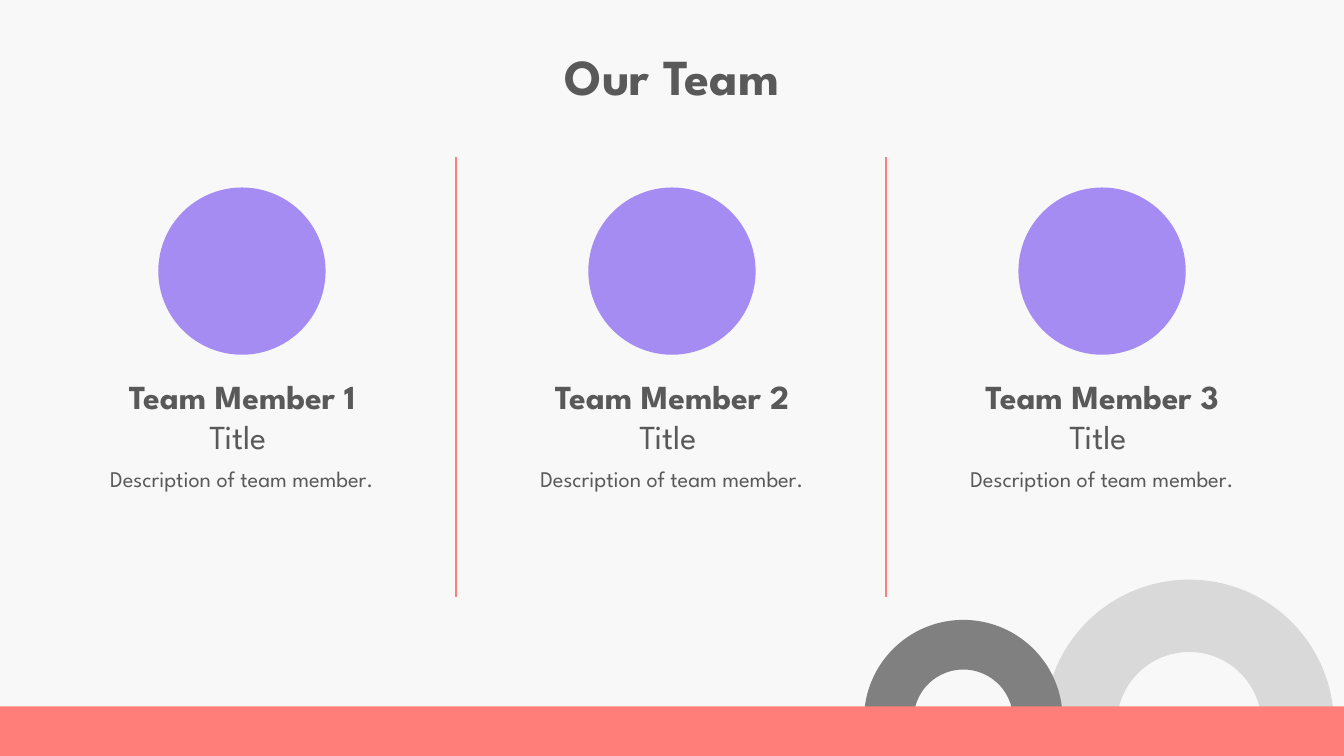
from pptx import Presentation
from pptx.dml.color import RGBColor
from pptx.enum.shapes import MSO_CONNECTOR, MSO_SHAPE
from pptx.enum.text import MSO_AUTO_SIZE, PP_ALIGN
from pptx.oxml.ns import qn
from pptx.util import Inches, Pt
from lxml.etree import SubElement

WIDE, HIGH = Inches(13.33), Inches(7.5)
HUES = {"page": "F8F8F8", "coral": "FF7E79", "violet": "A48CF2",
        "text": "595959", "dark": "808080", "light": "D9D9D9"}
FACE = "League Spartan"
HEAD = {"size": Pt(36), "bold": True}
NAME = {"size": Pt(24), "bold": True}
ROLE = {"size": Pt(24), "bold": False}
BODY = {"size": Pt(16), "bold": False}


def hue(key):
    return RGBColor.from_string(HUES[key])


# Grid: 100 columns across and 100 rows down
def col(n):
    return round(WIDE * n / 100)


def row(n):
    return round(HIGH * n / 100)


def add_form(slide, kind, x, y, w, h, key):
    form = slide.shapes.add_shape(kind, x, y, w, h)
    form.shadow.inherit = False
    form.fill.solid()
    form.fill.fore_color.rgb = hue(key)
    form.line.fill.background()


def add_text(slide, x, y, w, h, lines):
    """Each line is its text, its font values and the space before it."""
    frame = slide.shapes.add_textbox(x, y, w, h).text_frame
    frame.word_wrap = True
    frame.auto_size = MSO_AUTO_SIZE.SHAPE_TO_FIT_TEXT
    for i, (text, style, gap) in enumerate(lines):
        para = frame.add_paragraph() if i else frame.paragraphs[0]
        para.alignment = PP_ALIGN.CENTER
        para.space_before = Pt(gap)
        run = para.add_run()
        run.text = text
        run.font.color.rgb = hue("text")
        for key, value in {"name": FACE, **style}.items():
            setattr(run.font, key, value)


def add_rule(slide, x, top, end):
    rule = slide.shapes.add_connector(MSO_CONNECTOR.STRAIGHT, x, top, x, end)
    rule.line.color.rgb = hue("coral")
    rule.line.width = Pt(1.5)
    SubElement(rule._element.spPr, qn("a:effectLst"))


def add_card(slide, mid, num):
    size, wide = col(12.45), col(24.3)
    add_text(slide, mid - wide // 2, row(49.07), wide, row(20.4), [
        (f"Team Member {num}", NAME, 0),
        ("Title ", ROLE, 0),
        ("Description of team member.", BODY, 6)])
    add_form(slide, MSO_SHAPE.OVAL, mid - size // 2, row(24.8),
             size, size, "violet")


def main():
    deck = Presentation()
    deck.slide_width, deck.slide_height = WIDE, HIGH
    slide = deck.slides.add_slide(deck.slide_layouts[6])
    slide.background.fill.solid()
    slide.background.fill.fore_color.rgb = hue("page")

    # Arches behind the bottom bar
    for x, y, size, key in ((77.72, 76.67, 21.53, "light"),
                            (64.29, 82, 14.78, "dark")):
        add_form(slide, MSO_SHAPE.BLOCK_ARC, col(x), row(y),
                 col(size), col(size), key)

    # Heading
    add_text(slide, col(5.3), row(5.33), col(89.4), row(9.47),
             [("Our Team", HEAD, 0)])

    # Team members, 32 columns apart
    for i in range(3):
        add_card(slide, col(18 + 32 * i), i + 1)

    # Dividers between the members
    for i in range(2):
        add_rule(slide, col(33.9 + 32 * i), row(20.8), row(78.93))

    # Bottom bar
    add_form(slide, MSO_SHAPE.RECTANGLE, 0, row(93.45), WIDE, row(6.67),
             "coral")
    deck.save("out.pptx")


if __name__ == "__main__":
    main()
